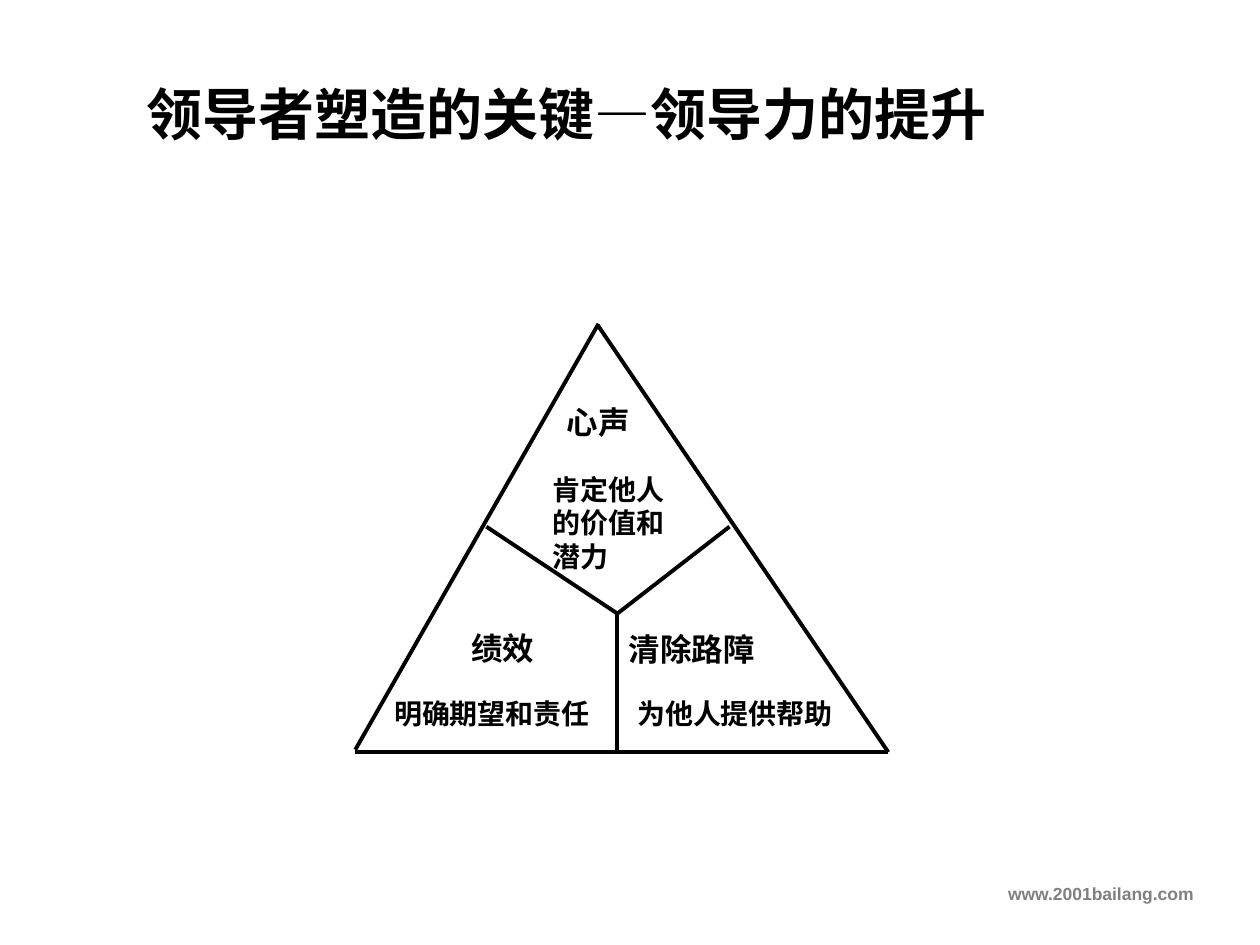
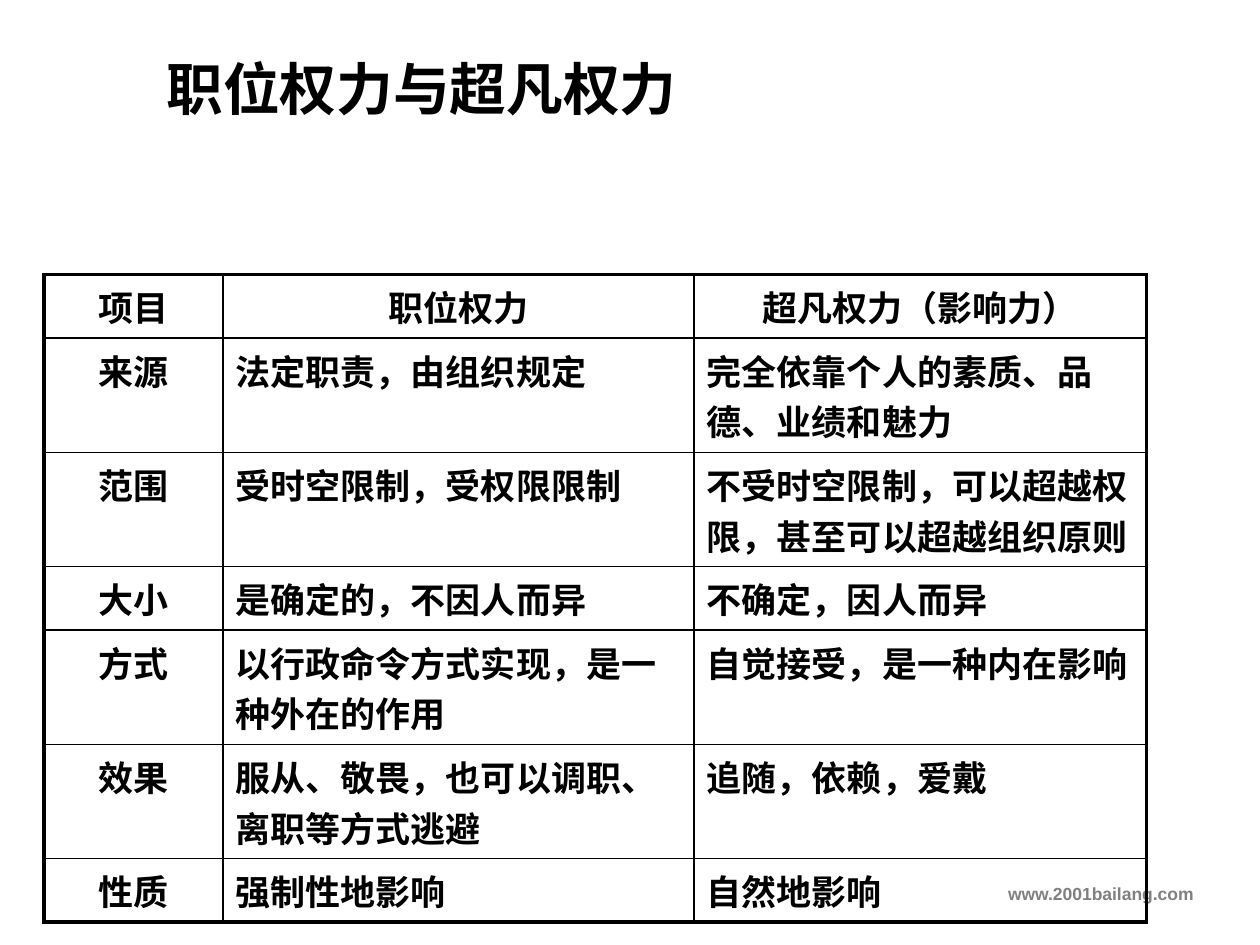
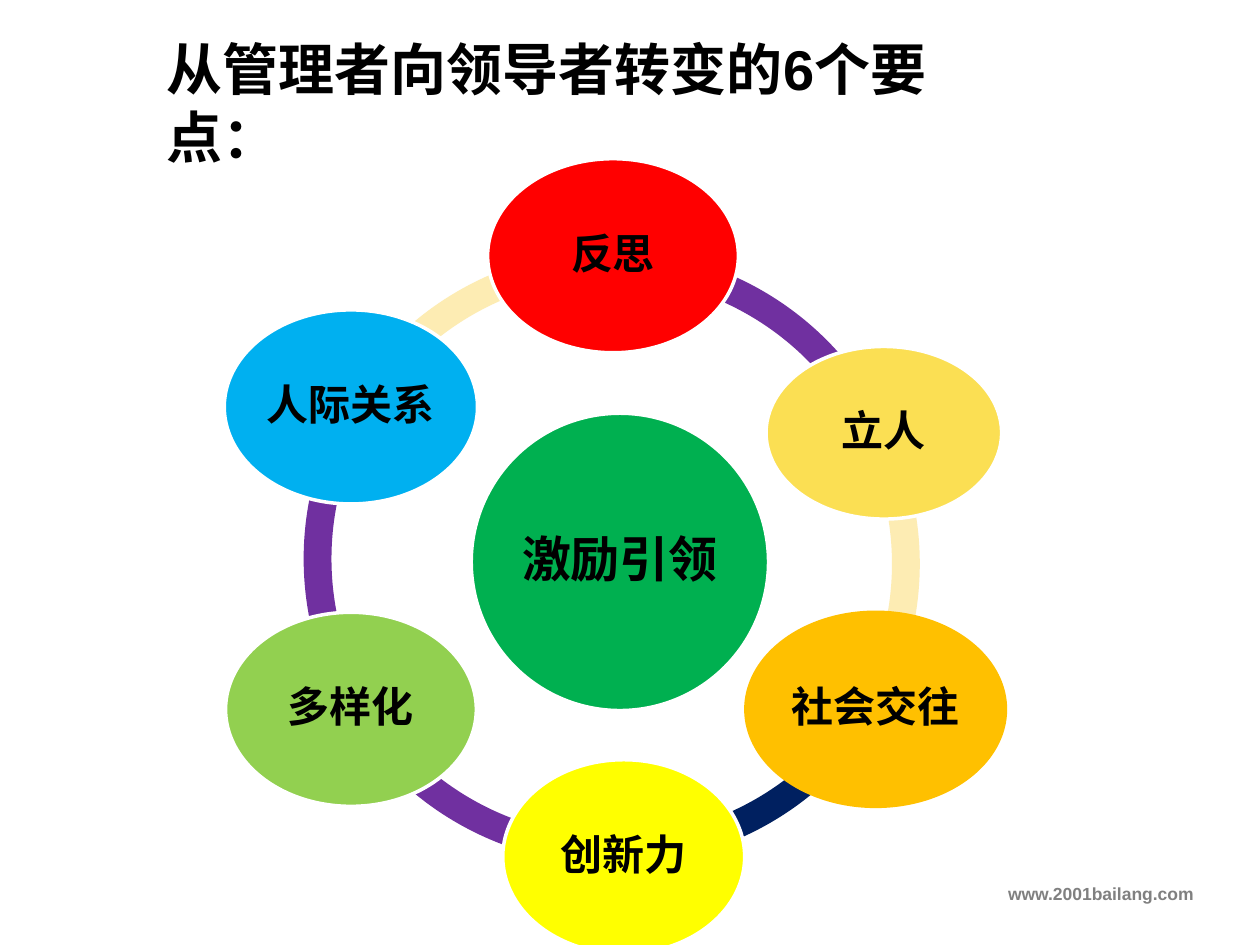
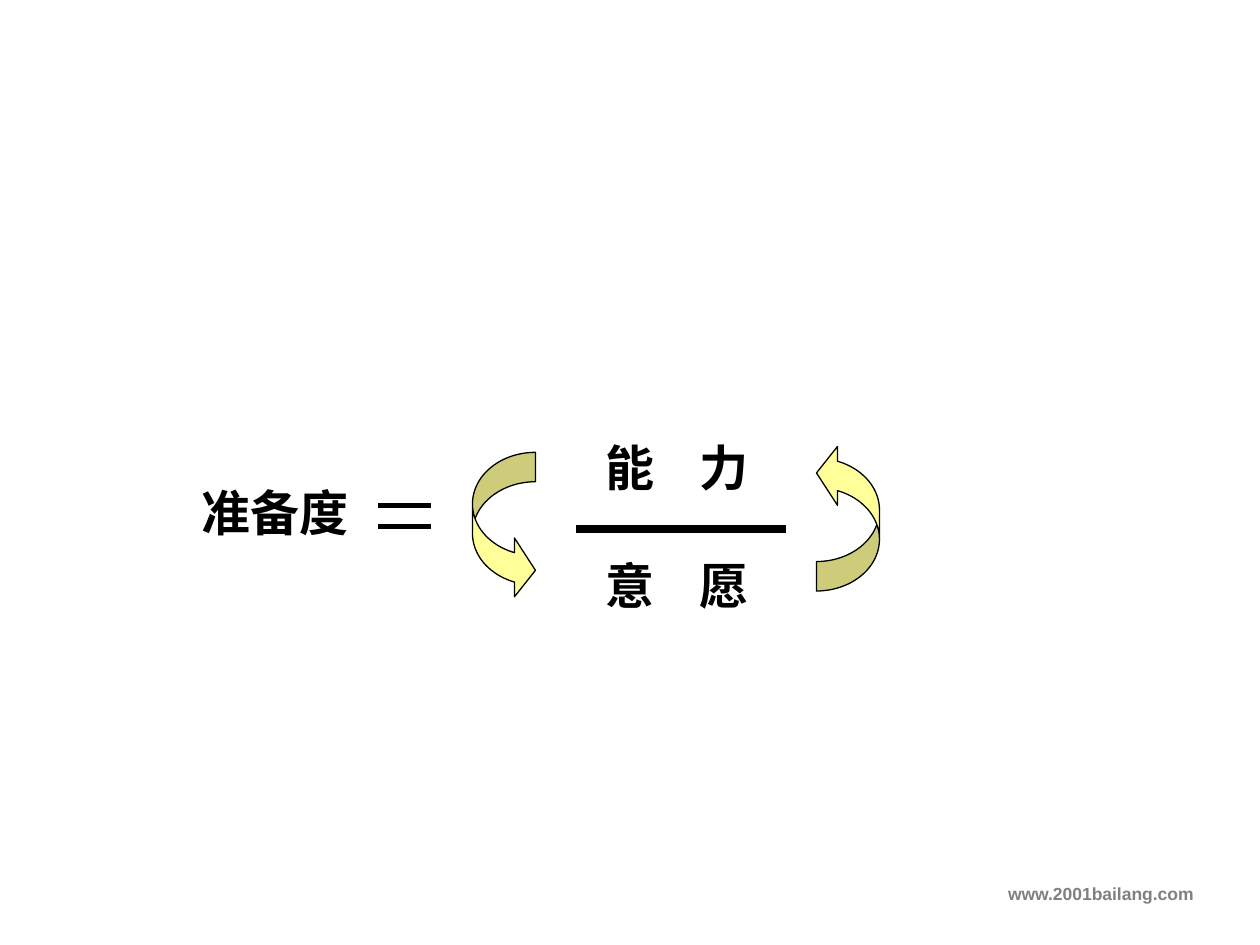
from lxml.etree import SubElement
from pptx import Presentation
from pptx.dml.color import RGBColor
from pptx.enum.shapes import MSO_CONNECTOR, MSO_SHAPE
from pptx.enum.text import MSO_ANCHOR, MSO_AUTO_SIZE, PP_ALIGN
from pptx.oxml.ns import qn
from pptx.util import Emu, Pt

LATIN = "Arial"
CHINESE = "Noto Sans CJK SC"
BLACK, WHITE, GREY = "000000", "FFFFFF", "808080"
CREAM, PURPLE, NAVY, PALE_YELLOW = "FDECB3", "7030A0", "002060", "FFFF99"
THIN, THICK = 1, 2.25
TITLE_ONLY, BLANK = 5, 6

POWER_COLUMNS = [142, 374, 359]
POWER_ROWS = [
    (49, "项目", "职位权力", "超凡权力（影响力）"),
    (50, "来源", "法定职责，由组织规定", "完全依靠个人的素质、品德、业绩和魅力"),
    (64, "范围", "受时空限制，受权限限制", "不受时空限制，可以超越权限，甚至可以超越组织原则"),
    (46, "大小", "是确定的，不因人而异", "不确定，因人而异"),
    (64, "方式", "以行政命令方式实现，是一种外在的作用", "自觉接受，是一种内在影响"),
    (63, "效果", "服从、敬畏，也可以调职、离职等方式逃避", "追随，依赖，爱戴"),
    (49, "性质", "强制性地影响", "自然地影响"),
]

TRIANGLE_LINES = [
    (475, 257, 282, 595),
    (475, 259, 705, 597),
    (282, 597, 705, 597),
    (386, 418, 490, 487),
    (490, 487, 579, 418),
    (490, 487, 490, 597),
]
TRIANGLE_LABELS = [
    ((440, 315, 87, 47), "心声", 18),
    ((429, 370, 127, 53), "肯定他人的价值和潜力", 16),
    ((364, 494, 87, 47), "绩效", 18),
    ((303, 548, 185, 30), "明确期望和责任", 16),
    ((489, 495, 157, 47), "清除路障", 18),
    ((496, 548, 193, 37), "为他人提供帮助", 16),
]

RING_ARCS = [
    (241, 198, 210, 270, CREAM),
    (241, 198, 150, 210, PURPLE),
    (240, 195, 87.57, 149.24, PURPLE),
    (243, 195, 30.79, 88.35, NAVY),
    (239, 202, 334.26, 28.88, CREAM),
    (237, 198, 271.01, 335.35, PURPLE),
]
RING_POINTS = [
    ((374, 328, 236, 236), "激励引领", 28, "00B050", WHITE),
    ((387, 126, 199, 154), "反思", 24, "FF0000", WHITE),
    ((608, 275, 187, 137), "立人", 24, "FBDF53", WHITE),
    ((592, 486, 206, 154), "社会交往", 24, "FFC000", "FFC000"),
    ((399, 603, 192, 154), "创新力", 24, "FFFF00", WHITE),
    ((179, 486, 199, 154), "多样化", 24, "92D050", WHITE),
    ((178, 246, 201, 154), "人际关系", 24, "00B0F0", WHITE),
]


def px(length):
    """Turn px, one hundred to the inch, into EMU."""
    return Emu(length * 9144)


def place(bounds):
    """Turn left, top, width and height into EMU."""
    return [px(length) for length in bounds]


def rgb(code):
    """Turn a hex string into a colour."""
    return RGBColor.from_string(code)


def write(frame, words, size, color=BLACK, latin=LATIN, align=PP_ALIGN.LEFT, spacing=None):
    """Write one bold run, with no hanging punctuation, into a frame."""
    paragraph = frame.paragraphs[0]
    paragraph.alignment = align
    paragraph.line_spacing = spacing
    paragraph._p.get_or_add_pPr().set("hangingPunct", "0")
    run = paragraph.add_run()
    run.text = words
    run.font.size = Pt(size)
    run.font.bold = True
    run.font.color.rgb = rgb(color)
    run.font.name = latin
    SubElement(run._r.get_or_add_rPr(), qn("a:ea"), typeface=CHINESE)


def add_label(slide, bounds, words, size, **style):
    """Add a wrapping text box."""
    label = slide.shapes.add_textbox(*place(bounds))
    label.text_frame.word_wrap = True
    write(label.text_frame, words, size, **style)
    return label


def set_title(slide, bounds, words, size=32, **style):
    """Place and write the title."""
    title = slide.shapes.title
    title.left, title.top, title.width, title.height = place(bounds)
    frame = title.text_frame
    frame.auto_size = MSO_AUTO_SIZE.NONE
    frame.vertical_anchor = MSO_ANCHOR.MIDDLE
    write(frame, words, size, **style)


def add_line(slide, ends, width=THICK):
    """Add a straight black line without a shadow."""
    line = slide.shapes.add_connector(MSO_CONNECTOR.STRAIGHT, *place(ends))
    line.line.color.rgb = rgb(BLACK)
    line.line.width = Pt(width)
    SubElement(line._element.spPr, qn("a:effectLst"))


def add_figure(slide, preset, bounds, fill, outline=None, width=1, adjustments=()):
    """Add a filled preset shape, outlined if a colour is given."""
    figure = slide.shapes.add_shape(preset, *place(bounds))
    figure.shadow.inherit = False
    figure.fill.solid()
    figure.fill.fore_color.rgb = rgb(fill)
    if outline:
        figure.line.color.rgb = rgb(outline)
        figure.line.width = Pt(width)
    else:
        figure.line.fill.background()
    for index, value in enumerate(adjustments):
        figure.adjustments[index] = value
    return figure


def add_point(slide, bounds, words, size, fill, outline):
    """Add an ellipse with a centred caption."""
    point = add_figure(slide, MSO_SHAPE.OVAL, bounds, fill, outline, 2)
    frame = point.text_frame
    frame.word_wrap = True
    frame.vertical_anchor = MSO_ANCHOR.MIDDLE
    frame.margin_left = frame.margin_right = px(3)
    frame.margin_top = frame.margin_bottom = px(3)
    write(frame, words, size, align=PP_ALIGN.CENTER, spacing=0.9)


def set_borders(cell, widths):
    """Draw the left, right, top and bottom borders of a cell."""
    properties = cell._tc.get_or_add_tcPr()
    for index, (side, width) in enumerate(zip(("lnL", "lnR", "lnT", "lnB"), widths)):
        border = SubElement(properties, qn(f"a:{side}"), w=str(Pt(width)))
        paint = SubElement(border, qn("a:solidFill"))
        SubElement(paint, qn("a:srgbClr"), val=BLACK)
        properties.insert(index, border)


def add_grid(slide, left, top, columns, rows):
    """Add a table with thin inner lines and a thick frame."""
    bounds = left, top, sum(columns), sum(row[0] for row in rows)
    grid = slide.shapes.add_table(len(rows), len(columns), *place(bounds)).table
    grid.first_row = grid.horz_banding = False
    for column, width in zip(grid.columns, columns):
        column.width = px(width)
    last_row, last_column = len(rows) - 1, len(columns) - 1
    for r, (height, *entries) in enumerate(rows):
        grid.rows[r].height = px(height)
        for c, words in enumerate(entries):
            cell = grid.cell(r, c)
            cell.fill.background()
            centred = r == 0 or c == 0
            write(cell.text_frame, words, 20,
                  align=PP_ALIGN.CENTER if centred else PP_ALIGN.LEFT)
            outer = (c == 0, c == last_column, r == 0, r == last_row)
            set_borders(cell, [THICK if edge else THIN for edge in outer])


def add_footer(presentation, slide):
    """Put the web address on the slide master."""
    footer = add_label(slide, (0, 696, 957, 35), "www.2001bailang.com", 10,
                       color=GREY, align=PP_ALIGN.RIGHT)
    presentation.slide_master.shapes.element.append(footer.element)


def build_triangle(slide):
    """Show the three parts of leadership in a triangle."""
    set_title(slide, (106, 44, 724, 62), "领导者塑造的关键—领导力的提升",
              latin=CHINESE, spacing=Pt(59.8))
    for ends in TRIANGLE_LINES:
        add_line(slide, ends)
    for bounds, words, size in TRIANGLE_LABELS:
        add_label(slide, bounds, words, size)


def build_powers(slide):
    """Compare the two kinds of power."""
    set_title(slide, (122, 38, 828, 63), "职位权力与超凡权力", 32.4)
    add_grid(slide, 35, 218, POWER_COLUMNS, POWER_ROWS)


def build_ring(slide):
    """Set six points on a ring around the core."""
    set_title(slide, (122, 50, 677, 62), "从管理者向领导者转变的6个要点：")
    for left, top, start, end, fill in RING_ARCS:
        angles = [degrees * 0.6 for degrees in (start, end)]
        add_figure(slide, MSO_SHAPE.BLOCK_ARC, (left, top, 491, 491), fill,
                   adjustments=(*angles, 0.045))
    for point in RING_POINTS:
        add_point(slide, *point)


def build_readiness(slide):
    """Show readiness as ability over willingness."""
    for top, words in ((342, "能\t力"), (436, "意\t愿")):
        term = add_label(slide, (471, top, 143, 57), words, 28)
        properties = term.text_frame.paragraphs[0]._p.get_or_add_pPr()
        stops = SubElement(properties, qn("a:tabLst"))
        SubElement(stops, qn("a:tab"), pos=str(px(74)), algn="l")
    add_line(slide, (457, 420, 624, 420), 4.5)
    add_label(slide, (150, 378, 140, 57), "准备度", 28)
    for y in (401, 418):
        add_line(slide, (300, y, 342, y), 3)
    for left, top, rotation in ((375, 359, 0), (648, 352, 180)):
        arrow = add_figure(slide, MSO_SHAPE.CURVED_RIGHT_ARROW, (left, top, 50, 117),
                           PALE_YELLOW, BLACK, 0.75, (0.467, 0.933, 0.333))
        arrow.rotation = rotation


def main():
    """Build the four slides."""
    presentation = Presentation()
    presentation.slide_width, presentation.slide_height = px(1000), px(750)
    pages = [(TITLE_ONLY, build_triangle), (TITLE_ONLY, build_powers),
             (TITLE_ONLY, build_ring), (BLANK, build_readiness)]
    for layout, build in pages:
        build(presentation.slides.add_slide(presentation.slide_layouts[layout]))
    add_footer(presentation, presentation.slides[0])
    presentation.save("out.pptx")


if __name__ == "__main__":
    main()
